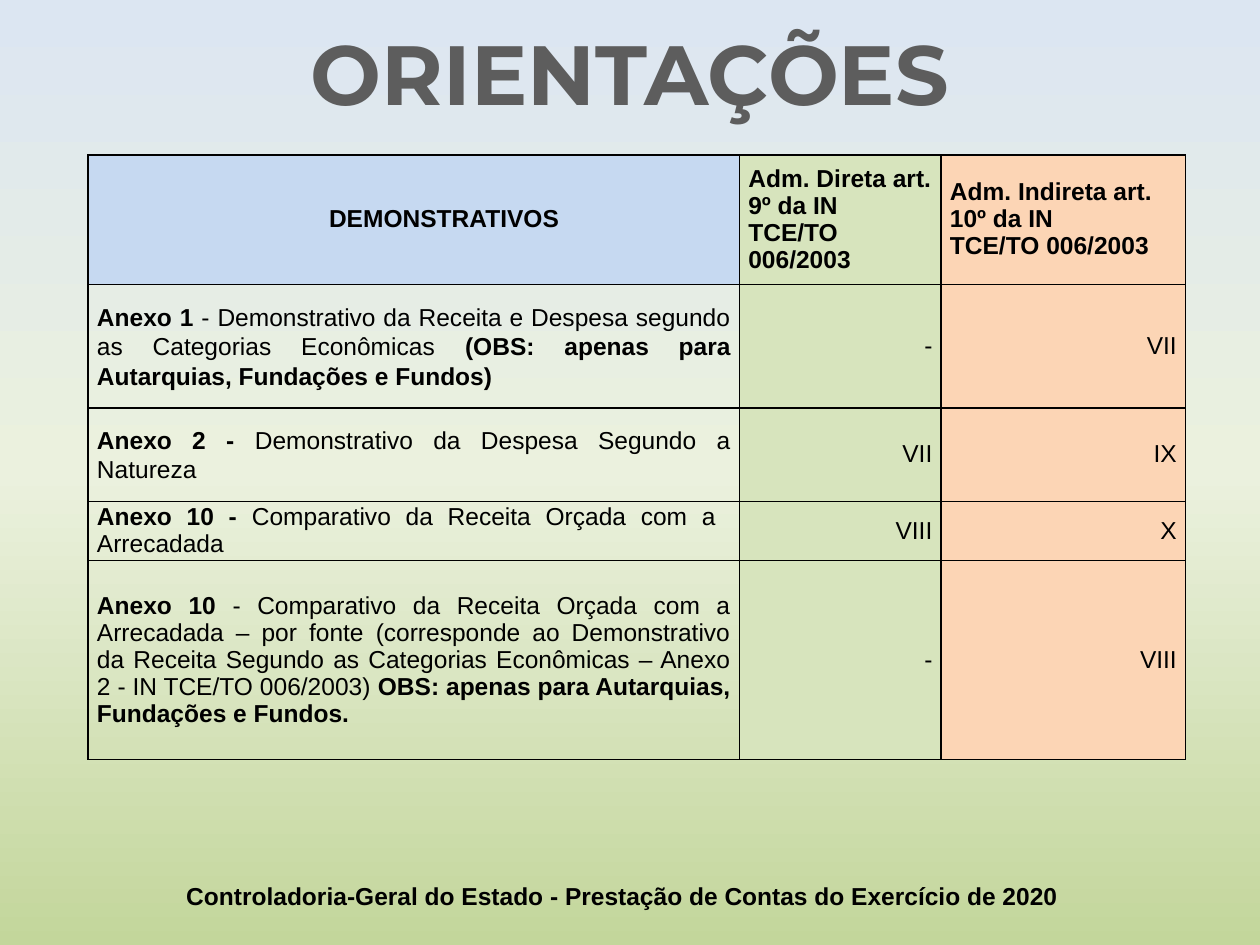
from copy import deepcopy

from lxml import etree
from pptx import Presentation
from pptx import util as u
from pptx.dml.color import RGBColor
from pptx.enum import text
from pptx.oxml.ns import qn

THEME = {
    "font": "Arial", "title_font": "Montserrat",
    "body": 14, "title": 48,
    "ink": "000000", "title_ink": "5D5D5D",
    "background": ["DCE6F2", "EBF1DE", "C3D69B"],
    "header": "C6D9F1", "columns": [None, "D7E4BD", "FCD5B5"],
}

TITLE = "ORIENTAÇÕES"
FOOTER = "Controladoria-Geral do Estado - Prestação de Contas do Exercício de 2020"
HEADERS = [
    "DEMONSTRATIVOS",
    "Adm. Direta art. 9º da IN TCE/TO 006/2003",
    "Adm. Indireta art. 10º da IN\nTCE/TO 006/2003",
]
# Each statement: (bold, regular, bold) text, then direct and indirect items
ROWS = [
    (("Anexo 1",
      " - Demonstrativo da Receita e Despesa segundo as Categorias Econômicas ",
      "(OBS: apenas para Autarquias, Fundações e Fundos)"), "-", "VII"),
    (("Anexo 2 - ", "Demonstrativo da Despesa Segundo a Natureza"), "VII", "IX"),
    (("Anexo 10 - ", "Comparativo da Receita Orçada com a  Arrecadada"), "VIII", "X"),
    (("Anexo 10",
      " - Comparativo da Receita Orçada com a Arrecadada – por fonte (corresponde"
      " ao Demonstrativo da Receita Segundo as Categorias Econômicas – Anexo 2"
      " - IN TCE/TO 006/2003) ",
      "OBS: apenas para Autarquias, Fundações e Fundos."), "-", "VIII"),
]
LEFT, TOP = 0.7, 1.23
WIDTHS = [5.17, 1.6, 1.94]
HEIGHTS = [1.03, 0.98, 0.74, 0.47, 1.58]
STATEMENT_SPACING = [1.07, 1.07, 0.98, 0.98]
ALIGN = text.PP_ALIGN


def style(r, bold, size=THEME["body"], font=THEME["font"], color=THEME["ink"]):
    r.font.size, r.font.name, r.font.bold = u.Pt(size), font, bold
    r.font.color.rgb = RGBColor.from_string(color)


def paint_background(s):
    fill = s.background.fill
    fill.gradient()
    fill.gradient_angle = 270
    stops = next(s.background._cSld.iter(qn("a:gsLst")))
    stops.append(deepcopy(stops[-1]))
    colors = THEME["background"]
    for i, (stop, color) in enumerate(zip(fill.gradient_stops, colors)):
        stop.position = i / (len(colors) - 1)
        stop.color.rgb = RGBColor.from_string(color)


def add_line(s, words, box, **look):
    tf = s.shapes.add_textbox(*map(u.Inches, box)).text_frame
    tf.word_wrap = True
    tf.text = words
    p = tf.paragraphs[0]
    p.alignment = ALIGN.CENTER
    style(p.runs[0], True, **look)


def set_borders(cell):
    tcPr = cell._tc.get_or_add_tcPr()
    for i, side in enumerate(("lnL", "lnR", "lnT", "lnB")):
        ln = etree.Element(qn(f"a:{side}"), w=str(u.Pt(1)))
        fill = etree.SubElement(ln, qn("a:solidFill"))
        etree.SubElement(fill, qn("a:srgbClr"), val=THEME["ink"])
        tcPr.insert(i, ln)


def fill_cell(cell, parts, color, align, spacing=0.98, indent=0, bold=True):
    """Write parts as runs whose weight alternates, starting with bold."""
    cell.vertical_anchor = text.MSO_ANCHOR.MIDDLE
    cell.margin_left = cell.margin_right = u.Inches(0.07)
    cell.margin_top = cell.margin_bottom = 0
    if color:
        cell.fill.solid()
        cell.fill.fore_color.rgb = RGBColor.from_string(color)
    else:
        cell.fill.background()
    set_borders(cell)
    tf = cell.text_frame
    tf.text = parts[0]
    for part in parts[1:]:
        tf.paragraphs[0].add_run().text = part
    for p in tf.paragraphs:
        p.alignment, p.line_spacing = align, spacing
        if indent:
            p._p.get_or_add_pPr().set("indent", str(u.Inches(indent)))
        for i, r in enumerate(p.runs):
            style(r, bold and i % 2 == 0)


def add_statements(s):
    box = (LEFT, TOP, sum(WIDTHS), sum(HEIGHTS))
    table = s.shapes.add_table(len(HEIGHTS), len(WIDTHS), *map(u.Inches, box)).table
    for col, width in zip(table.columns, WIDTHS):
        col.width = u.Inches(width)
    for row, height in zip(table.rows, HEIGHTS):
        row.height = u.Inches(height)
    fills = THEME["columns"]
    for c, header in enumerate(HEADERS):
        fill_cell(table.cell(0, c), [header], fills[c] or THEME["header"],
                  ALIGN.LEFT if c else ALIGN.CENTER, indent=0 if c else 0.48)
    for n, (parts, *items) in enumerate(ROWS, 1):
        fill_cell(table.cell(n, 0), parts, fills[0], ALIGN.JUSTIFY,
                  STATEMENT_SPACING[n - 1])
        for c, item in enumerate(items, 1):
            fill_cell(table.cell(n, c), [item], fills[c], ALIGN.RIGHT, bold=False)


def main():
    prs = Presentation()
    prs.slide_width, prs.slide_height = u.Inches(10), u.Inches(7.5)
    s = prs.slides.add_slide(prs.slide_layouts[6])
    paint_background(s)
    add_line(s, FOOTER, (0.55, 6.94, 8.78, 0.34))
    add_statements(s)
    add_line(s, TITLE, (0.06, 0.12, 9.88, 0.91), size=THEME["title"],
             font=THEME["title_font"], color=THEME["title_ink"])
    prs.save("out.pptx")


if __name__ == "__main__":
    main()
